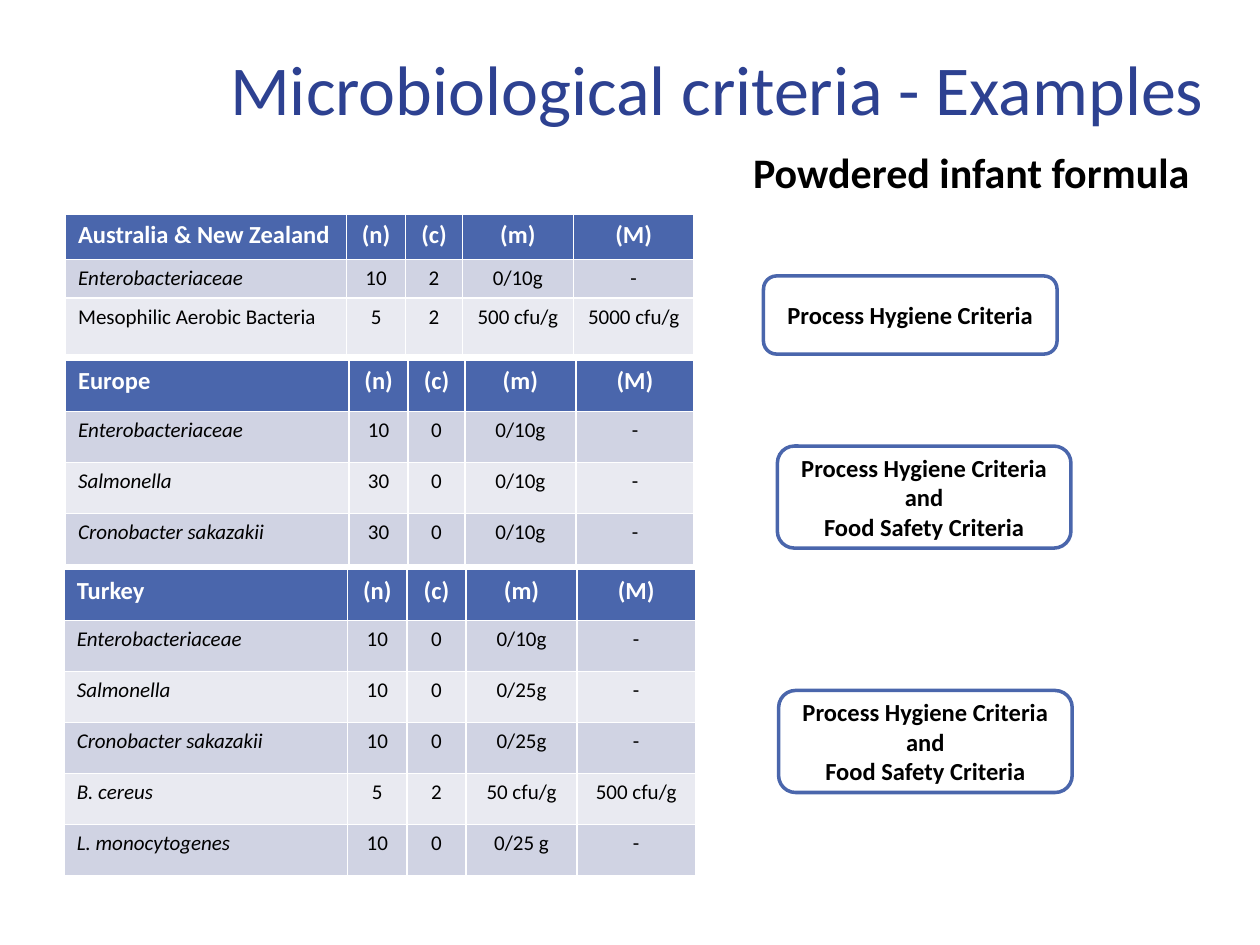
from pptx import Presentation
from pptx.dml.color import RGBColor
from pptx.enum.shapes import MSO_SHAPE
from pptx.enum.text import MSO_ANCHOR, PP_ALIGN
from pptx.util import Inches, Pt

LEFT, CENTER, RIGHT = PP_ALIGN.LEFT, PP_ALIGN.CENTER, PP_ALIGN.RIGHT
TOP, MIDDLE = MSO_ANCHOR.TOP, MSO_ANCHOR.MIDDLE
ROUNDED_RECTANGLE = MSO_SHAPE.ROUNDED_RECTANGLE

WHITE = RGBColor(0xFF, 0xFF, 0xFF)
BLACK = RGBColor(0x00, 0x00, 0x00)
TITLE_BLUE = RGBColor(0x2D, 0x41, 0x91)
HEADER_BLUE = RGBColor(0x4A, 0x66, 0xAC)
BAND_DARK = RGBColor(0xD0, 0xD3, 0xE3)
BAND_LIGHT = RGBColor(0xE9, 0xEA, 0xF1)

FONT = "Calibri"
LIMITS = ["(n)", "(c)", "(m)", "(M)"]
UPRIGHT_NAMES = {"Mesophilic Aerobic Bacteria"}

AUSTRALIA_ROWS = [
    ["Australia & New Zealand", *LIMITS],
    ["Enterobacteriaceae", "10", "2", "0/10g", "-"],
    ["Mesophilic Aerobic Bacteria", "5", "2", "500 cfu/g", "5000 cfu/g"],
]
EUROPE_ROWS = [
    ["Europe", *LIMITS],
    ["Enterobacteriaceae", "10", "0", "0/10g", "-"],
    ["Salmonella", "30", "0", "0/10g", "-"],
    ["Cronobacter sakazakii", "30", "0", "0/10g", "-"],
]
TURKEY_ROWS = [
    ["Turkey", *LIMITS],
    ["Enterobacteriaceae", "10", "0", "0/10g", "-"],
    ["Salmonella", "10", "0", "0/25g", "-"],
    ["Cronobacter sakazakii", "10", "0", "0/25g", "-"],
    ["B. cereus", "5", "2", "50 cfu/g", "500 cfu/g"],
    ["L. monocytogenes", "10", "0", "0/25 g", "-"],
]
BOTH_CRITERIA = ["Process Hygiene Criteria and", "Food Safety Criteria"]


def write_paragraph(para, text, size, color, align=LEFT, bold=False, italic=False):
    para.alignment = align
    span = para.add_run()
    span.text = text
    font = span.font
    font.name, font.size, font.bold, font.italic = FONT, Pt(size), bold, italic
    font.color.rgb = color


def add_heading(page, left, top, width, height, text, size, color, bold=False):
    """Add a right-aligned line of text and return its paragraph."""
    box = page.shapes.add_textbox(
        Inches(left), Inches(top), Inches(width), Inches(height))
    frame = box.text_frame
    frame.word_wrap = True
    frame.vertical_anchor = TOP
    para = frame.paragraphs[0]
    write_paragraph(para, text, size, color, RIGHT, bold)
    return para


def add_criteria_table(page, left, top, widths, heights, rows):
    """Add a region's table; the default table style draws its white borders."""
    table = page.shapes.add_table(
        len(rows), len(widths), Inches(left), Inches(top),
        Inches(sum(widths)), Inches(sum(heights))).table
    for column, width in zip(table.columns, widths):
        column.width = Inches(width)
    for row_index, (values, height) in enumerate(zip(rows, heights)):
        table.rows[row_index].height = Inches(height)
        header = row_index == 0
        band = BAND_DARK if row_index % 2 else BAND_LIGHT
        for column_index, value in enumerate(values):
            cell = table.cell(row_index, column_index)
            cell.fill.solid()
            cell.fill.fore_color.rgb = HEADER_BLUE if header else band
            name = column_index == 0
            write_paragraph(
                cell.text_frame.paragraphs[0], value,
                14 if header else 12, WHITE if header else BLACK,
                LEFT if name else CENTER, bold=header,
                italic=name and not header and value not in UPRIGHT_NAMES)


def add_criteria_box(page, left, top, height, lines):
    box = page.shapes.add_shape(
        ROUNDED_RECTANGLE, Inches(left), Inches(top), Inches(2.33), Inches(height))
    box.shadow.inherit = False
    box.fill.solid()
    box.fill.fore_color.rgb = WHITE
    box.line.color.rgb = HEADER_BLUE
    box.line.width = Pt(2)
    frame = box.text_frame
    frame.word_wrap = True
    frame.vertical_anchor = MIDDLE
    for index, line in enumerate(lines):
        para = frame.add_paragraph() if index else frame.paragraphs[0]
        write_paragraph(para, line, 14, BLACK, CENTER, bold=True)


def main():
    deck = Presentation()
    deck.slide_width, deck.slide_height = Inches(10), Inches(7.5)
    page = deck.slides.add_slide(deck.slide_layouts[6])

    add_criteria_table(page, 0.52, 1.7, [2.23, 0.47, 0.45, 0.88, 0.96],
                       [0.36, 0.29, 0.45], AUSTRALIA_ROWS)
    title = add_heading(page, 1.03, 0.39, 8.62, 1.45,
                        "Microbiological criteria - Examples", 40, TITLE_BLUE)
    title.line_spacing = 0.9
    add_heading(page, 5.51, 1.11, 4.03, 0.91,
                "Powdered infant formula", 24, BLACK, bold=True)
    add_criteria_box(page, 6.06, 2.19, 0.62, ["Process Hygiene Criteria"])

    add_criteria_table(page, 0.52, 2.86, [2.25, 0.47, 0.45, 0.88, 0.94],
                       [0.405] * len(EUROPE_ROWS), EUROPE_ROWS)
    add_criteria_box(page, 6.17, 3.54, 0.81, BOTH_CRITERIA)

    add_criteria_table(page, 0.51, 4.52, [2.25, 0.47, 0.47, 0.88, 0.94],
                       [2.43 / len(TURKEY_ROWS)] * len(TURKEY_ROWS), TURKEY_ROWS)
    add_criteria_box(page, 6.18, 5.48, 0.81, BOTH_CRITERIA)

    deck.save("out.pptx")


if __name__ == "__main__":
    main()
